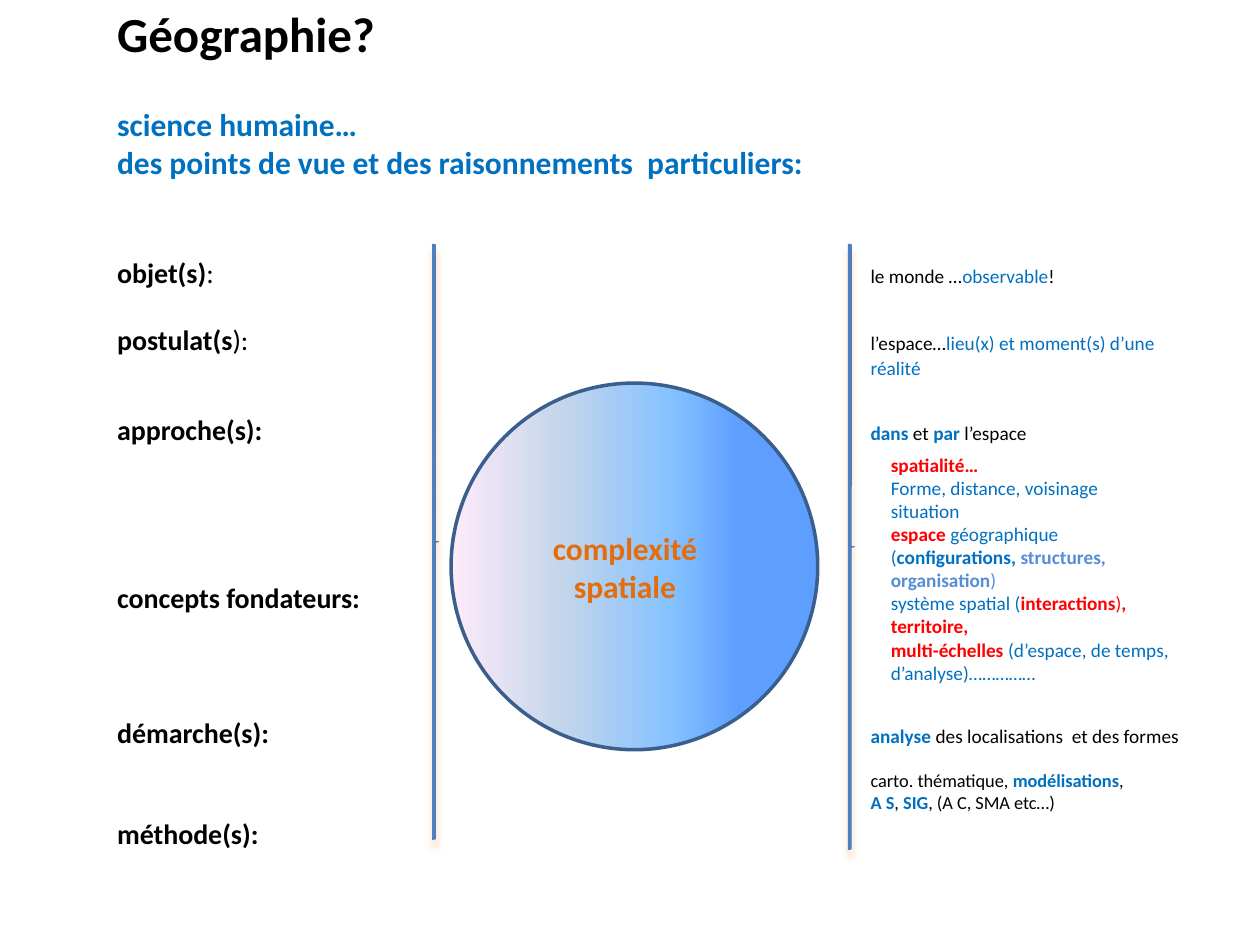
from lxml.etree import SubElement
from pptx import Presentation
from pptx.dml.color import RGBColor
from pptx.enum.shapes import MSO_SHAPE
from pptx.enum.text import PP_ALIGN
from pptx.oxml.ns import qn
from pptx.util import Inches, Pt

COLORS = {
    "black": "000000", "blue": "0070C0", "soft": "558ED5", "red": "FF0000",
    "orange": "E46C0A", "brace": "4F81BD", "brace_edge": "4B7EBC",
    "glow": "FCD5B5", "circle_edge": "3A5F8C",
}
SPHERE_STOPS = [(21, "5E9EFF"), (40, "85C2FF"), (70, "C4D6EB"), (100, "FFEBFA")]
COLUMNS, ROWS = 100, 75
ASCENT, LINE_HEIGHT = 0.95, 1.22
LABEL_X, NOTE_X = 9.3, 69.1
FIRST_LABEL, LABEL_STEP = 22.4, 2.67


class SlideBuilder:
    font = "Calibri"

    def __init__(self, deck):
        self.slide = deck.slides.add_slide(deck.slide_layouts[6])
        self.column = deck.slide_width / COLUMNS
        self.row = deck.slide_height / ROWS

    def box(self, x, y, width, height):
        return (round(x * self.column), round(y * self.row),
                round(width * self.column), round(height * self.row))

    def text(self, x, baseline, width, size, paragraphs, align=PP_ALIGN.LEFT, gap=0):
        line = Pt(size) / self.row
        place = self.box(x, baseline - ASCENT * line, width,
                         LINE_HEIGHT * line * len(paragraphs))
        frame = self.slide.shapes.add_textbox(*place).text_frame
        frame.word_wrap = True
        frame.margin_left = frame.margin_right = 0
        frame.margin_top = frame.margin_bottom = 0
        for number, runs in enumerate(paragraphs):
            paragraph = frame.add_paragraph() if number else frame.paragraphs[0]
            paragraph.alignment = align
            paragraph.space_before = Pt(gap if number else 0)
            for words, color, bold in runs:
                run = paragraph.add_run()
                run.text = words
                run.font.name = self.font
                run.font.size = Pt(size)
                run.font.bold = bold
                run.font.color.rgb = RGBColor.from_string(COLORS[color])

    def shape(self, kind, x, y, width, height, edge, weight):
        figure = self.slide.shapes.add_shape(kind, *self.box(x, y, width, height))
        figure.shadow.inherit = False
        figure.line.color.rgb = RGBColor.from_string(COLORS[edge])
        figure.line.width = Pt(weight)
        return figure

    def sphere(self, x, y, diameter):
        circle = self.shape(MSO_SHAPE.OVAL, x, y, diameter, diameter, "circle_edge", 2)
        circle.fill.gradient()
        circle.fill.gradient_angle = 180
        stops = circle._element.spPr.find(qn("a:gradFill")).find(qn("a:gsLst"))
        stops.clear()
        for position, color in [(0, SPHERE_STOPS[0][1])] + SPHERE_STOPS:
            stop = SubElement(stops, qn("a:gs"), pos=str(position * 1000))
            SubElement(stop, qn("a:srgbClr"), val=color)

    def brace(self, x, y, height):
        brace = self.shape(MSO_SHAPE.RIGHT_BRACE, x, y, 0.5, height, "brace_edge", 0.75)
        brace.fill.solid()
        brace.fill.fore_color.rgb = RGBColor.from_string(COLORS["brace"])
        effects = brace._element.spPr.find(qn("a:effectLst"))
        shadow = SubElement(effects, qn("a:outerShdw"), blurRad=str(Pt(4)),
                            dist=str(Pt(4)), dir="5400000", rotWithShape="0")
        SubElement(shadow, qn("a:srgbClr"), val=COLORS["glow"])


def black(words, bold=False):
    return words, "black", bold


def blue(words, bold=False):
    return words, "blue", bold


def red(words):
    return words, "red", True


TOPICS = [
    (0, [black("objet(s)", True), black(":")],
     [[black("le monde …"), blue("observable"), black("!")]]),
    (2, [black("postulat(s", True), black("):")],
     [[black("l’espace…"), blue("lieu(x) et moment(s) d’une")], [blue("réalité")]]),
    (4.67, [black("approche(s):", True)],
     [[blue("dans ", True), black("et "), blue("par ", True), black("l’espace")]]),
    (9.67, [black("concepts fondateurs:", True)], []),
    (13.67, [black("démarche(s):", True)],
     [[blue("analyse ", True), black("des localisations  et des formes")]]),
    (16.67, [black("méthode(s):", True)], []),
]
CONCEPTS = [
    [red("spatialité…")],
    [blue("Forme, distance, voisinage")],
    [blue("situation")],
    [red("espace "), blue("géographique ("), blue("configurations, ", True),
     ("structures, organisation", "soft", True), (")", "soft", False)],
    [blue("système spatial ("), red("interactions"), ((")"), "red", False), red(",")],
    [red("territoire,")],
    [red("multi-échelles "), blue("(d’espace, de temps, d’analyse)……………")],
]
METHODS = [
    [black("carto. thématique, "), blue("modélisations", True), black(",")],
    [blue("A S", True), black(", "), blue("SIG", True), black(", (A C, SMA etc…)")],
]


def main():
    deck = Presentation()
    deck.slide_width, deck.slide_height = Inches(10), Inches(7.5)
    page = SlideBuilder(deck)

    page.sphere(35.8, 30.4, 29.1)
    page.text(LABEL_X, 4, 80, 28, [[black("Géographie?", True)]])
    page.text(LABEL_X, 10.7, 80, 18, [
        [blue("science humaine…", True)],
        [blue("des points de vue et des raisonnements  particuliers:", True)],
    ])
    for step, label, note in TOPICS:
        baseline = FIRST_LABEL + step * LABEL_STEP
        page.text(LABEL_X, baseline, 24, 16, [label])
        if note:
            page.text(NOTE_X, baseline, 27, 11, note, gap=1)
    page.brace(34.3, 19.4, 47.2)
    page.brace(67.3, 19.4, 48)
    page.text(70.7, 37.4, 23.2, 11, CONCEPTS)
    page.text(NOTE_X, 62.4, 24, 10.5, METHODS)
    page.text(42, 44.4, 15.2, 18, [
        [("complexité", "orange", True)],
        [("spatiale", "orange", True)],
    ], PP_ALIGN.CENTER)
    deck.save("out.pptx")


if __name__ == "__main__":
    main()
